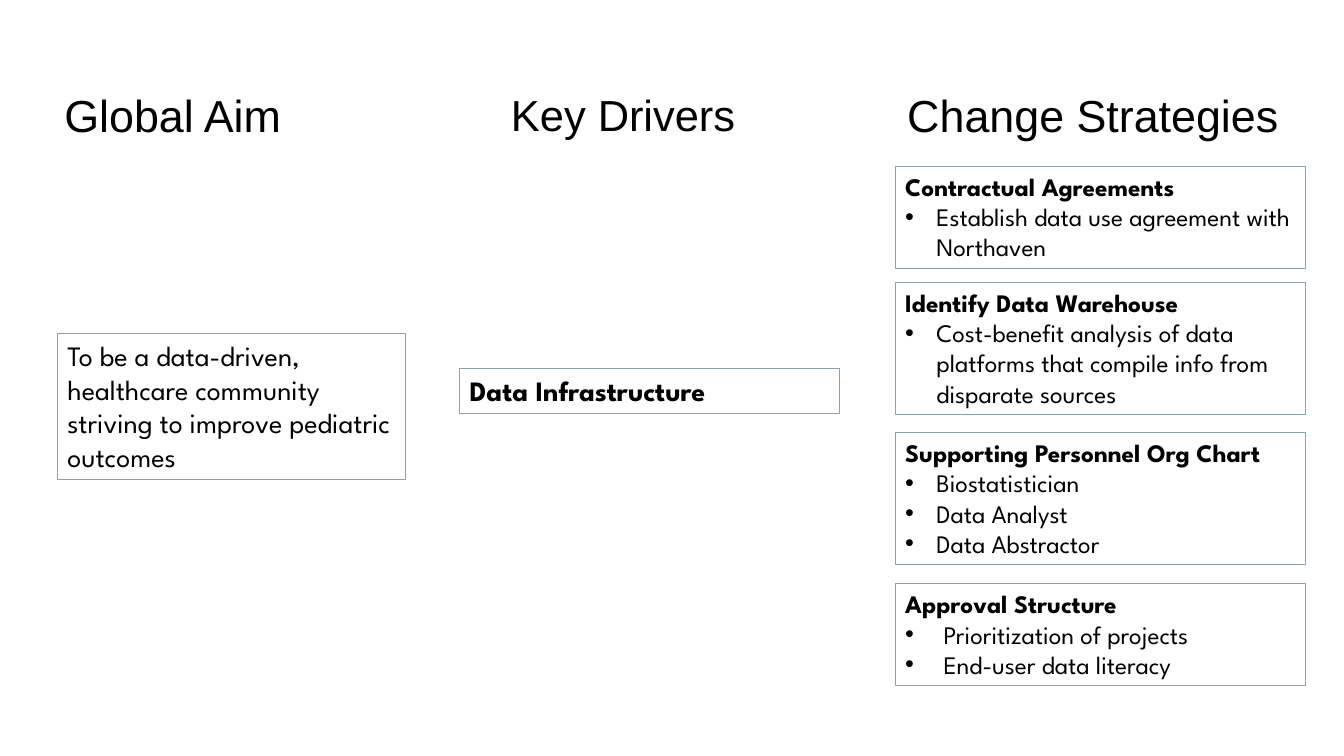
import pptx
import pptx.dml.color
import pptx.enum.shapes
import pptx.enum.text
import pptx.oxml.ns
import pptx.util
from lxml import etree

INK, BORDER = "000000", "8EA1AF"
HEADING_FONT, BODY_FONT = "Arial", "League Spartan"
HEADING_TOP = 0.82

STRATEGY_LEFT, STRATEGY_WIDTH = 8.88, 4.07
# Top, height, hanging indent, title, bullet items
STRATEGIES = [
    (1.65, 1.01, 0.31, "Contractual Agreements",
     ["Establish data use agreement with Northaven"]),
    (2.8, 1.31, 0.31, "Identify Data Warehouse",
     ["Cost-benefit analysis of data platforms that compile info from disparate sources"]),
    (4.29, 1.31, 0.31, "Supporting Personnel Org Chart",
     ["Biostatistician", "Data Analyst", "Data Abstractor"]),
    (5.79, 1.01, 0.38, "Approval Structure",
     ["Prioritization of projects", "End-user data literacy"]),
]


def color(value):
    return pptx.dml.color.RGBColor.from_string(value)


def inches(box):
    return [pptx.util.Inches(length) for length in box]


def format_paragraph(paragraph, font_name, size, bold=False):
    paragraph.alignment = pptx.enum.text.PP_ALIGN.LEFT
    for run in paragraph.runs:
        run.font.name = font_name
        run.font.size = pptx.util.Pt(size)
        run.font.bold = bold
        run.font.color.rgb = color(INK)


def add_bullet(paragraph, indent):
    properties = paragraph._p.get_or_add_pPr()
    properties.set("marL", str(pptx.util.Inches(indent)))
    properties.set("indent", str(-pptx.util.Inches(indent)))
    font = etree.SubElement(properties, pptx.oxml.ns.qn("a:buFont"))
    font.set("typeface", "Arial")
    bullet = etree.SubElement(properties, pptx.oxml.ns.qn("a:buChar"))
    bullet.set("char", "•")


def add_heading(slide, text, left, width, height, size=32):
    box = slide.shapes.add_textbox(*inches((left, HEADING_TOP, width, height)))
    box.text_frame.word_wrap = True
    box.text_frame.text = text
    format_paragraph(box.text_frame.paragraphs[0], HEADING_FONT, size)


def add_card(slide, box, text, size, bold=False):
    """Draw an outlined box with its first paragraph and return its text frame."""
    card = slide.shapes.add_shape(pptx.enum.shapes.MSO_SHAPE.RECTANGLE, *inches(box))
    card.shadow.inherit = False
    card.fill.background()
    card.line.color.rgb = color(BORDER)
    card.line.width = pptx.util.Pt(0.75)
    frame = card.text_frame
    frame.word_wrap = True
    frame.auto_size = pptx.enum.text.MSO_AUTO_SIZE.SHAPE_TO_FIT_TEXT
    frame.vertical_anchor = pptx.enum.text.MSO_ANCHOR.TOP
    frame.text = text
    format_paragraph(frame.paragraphs[0], BODY_FONT, size, bold)
    return frame


def add_strategy(slide, box, indent, title, items):
    frame = add_card(slide, box, title, 18, bold=True)
    for item in items:
        paragraph = frame.add_paragraph()
        paragraph.text = item
        add_bullet(paragraph, indent)
        format_paragraph(paragraph, BODY_FONT, 18)


def add_aim_column(slide):
    add_heading(slide, "Global Aim", 0.54, 4, 0.64)
    add_card(slide, (0.57, 3.31, 3.45, 1.45),
             "To be a data-driven, healthcare community striving to improve pediatric outcomes", 20)


def add_driver_column(slide):
    add_heading(slide, "Key Drivers", 4.97, 2.54, 0.62, size=31)
    add_card(slide, (4.56, 3.66, 3.77, 0.44), "Data Infrastructure", 20, bold=True)


def add_strategy_column(slide):
    add_heading(slide, "Change Strategies", 8.9, STRATEGY_WIDTH, 0.64)
    for top, height, indent, title, items in STRATEGIES:
        box = (STRATEGY_LEFT, top, STRATEGY_WIDTH, height)
        add_strategy(slide, box, indent, title, items)


def main():
    presentation = pptx.Presentation()
    presentation.slide_width = pptx.util.Inches(13.33)
    presentation.slide_height = pptx.util.Inches(7.5)
    slide = presentation.slides.add_slide(presentation.slide_layouts[6])
    add_aim_column(slide)
    add_driver_column(slide)
    add_strategy_column(slide)
    presentation.save("out.pptx")


if __name__ == "__main__":
    main()
